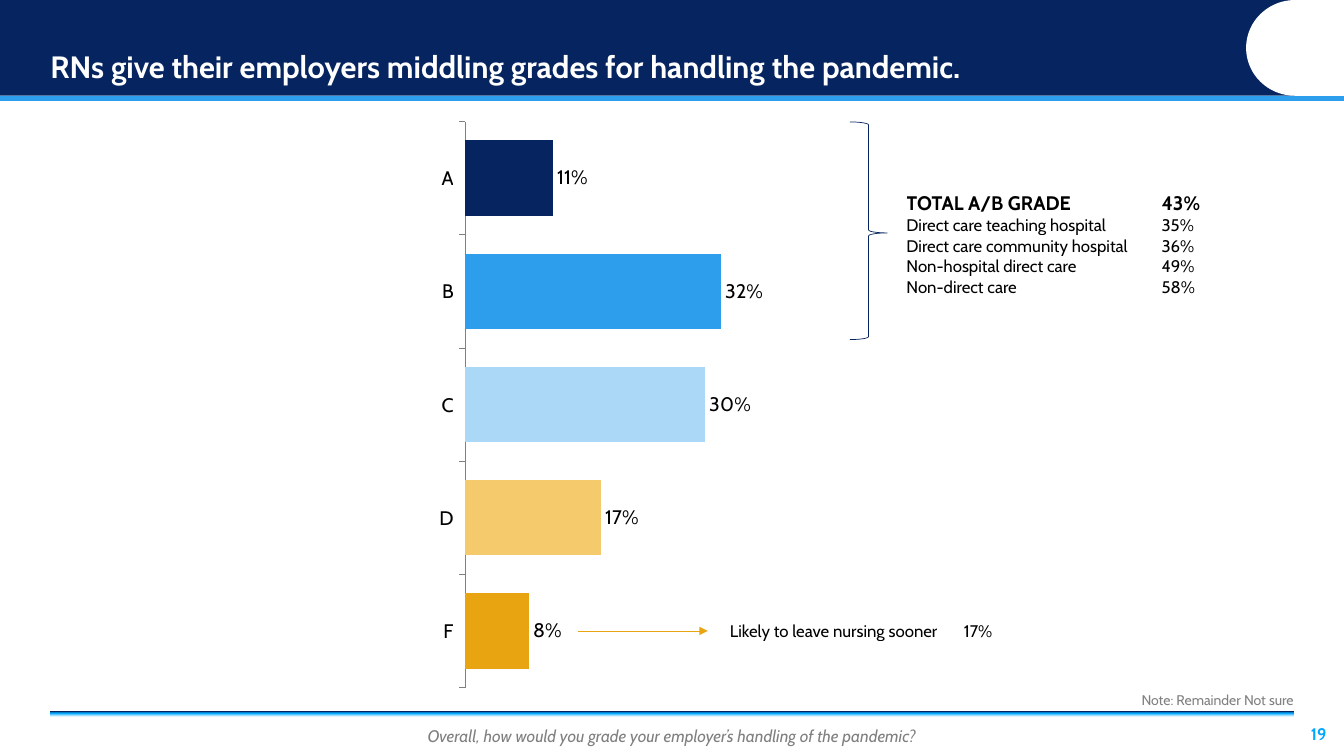
from dataclasses import dataclass, field
from typing import Any

from lxml import etree
from pptx import Presentation, oxml
from pptx import util as u
from pptx.chart.data import CategoryChartData
from pptx.dml.color import RGBColor
from pptx.enum import chart as ch
from pptx.enum import shapes, text
from pptx.oxml import ns


@dataclass(frozen=True)
class Theme:
    font: str = "Cabin"
    navy: str = "062560"
    blue: str = "2C9EEC"
    pale: str = "ABD8F7"
    sand: str = "F4CA6D"
    gold: str = "E8A511"
    bright: str = "00A7FF"
    mist: str = "CCEDFF"
    white: str = "FFFFFF"
    black: str = "000000"
    gray: str = "808080"
    title: int = 22
    large: int = 14
    normal: int = 12
    small: int = 10
    hairline: float = 0.5


@dataclass(frozen=True)
class Box:
    left: float
    top: float
    width: float
    height: float

    def emu(self) -> tuple:
        return tuple(u.Inches(v) for v in (self.left, self.top, self.width, self.height))


@dataclass(frozen=True)
class Grade:
    letter: str
    share: float
    color: str


@dataclass(frozen=True)
class Style:
    size: int
    color: str
    bold: bool = False
    italic: bool = False
    align: Any = text.PP_ALIGN.LEFT
    anchor: Any = text.MSO_ANCHOR.MIDDLE


@dataclass(frozen=True)
class Grid:
    box: Box
    cols: tuple
    rows: list
    style: Style
    header: Style = field(default=None)


T = Theme()
GRADES = [
    Grade("A", 0.11, T.navy),
    Grade("B", 0.32, T.blue),
    Grade("C", 0.30, T.pale),
    Grade("D", 0.17, T.sand),
    Grade("F", 0.08, T.gold),
]
CENTER, RIGHT = text.PP_ALIGN.CENTER, text.PP_ALIGN.RIGHT
TOP = text.MSO_ANCHOR.TOP
DETAIL = Style(T.normal, T.black, anchor=TOP)
GRIDS = [
    Grid(Box(0.5, 1.21, 4, 5.62), (4,), [(g.letter,) for g in GRADES],
         Style(T.large, T.black, align=RIGHT)),
    Grid(Box(8.99, 1.9, 3.35, 0.7), (2.53, 0.82), [
        ("TOTAL A/B GRADE", "43%"),
        ("Direct care teaching hospital", "35%"),
        ("Direct care community hospital", "36%"),
        ("Non-hospital direct care", "49%"),
        ("Non-direct care", "58%"),
    ], DETAIL, Style(T.large, T.black, bold=True, anchor=TOP)),
    Grid(Box(7.24, 6.16, 2.68, 0.14), (2.32, 0.36),
         [("Likely to leave nursing sooner", "17%")], DETAIL),
]


def rgb(color: str) -> RGBColor:
    return RGBColor.from_string(color)


def set_all(obj: Any, values: dict) -> None:
    for name, value in values.items():
        setattr(obj, name, value)


def set_font(font: Any, style: Style) -> None:
    set_all(font, {"name": T.font, "size": u.Pt(style.size),
                   "bold": style.bold, "italic": style.italic})
    font.color.rgb = rgb(style.color)


def write(tf: Any, words: str, style: Style, top: float = 0, bottom: float = 0) -> None:
    set_all(tf, {"word_wrap": True, "auto_size": text.MSO_AUTO_SIZE.NONE,
                 "vertical_anchor": style.anchor, "margin_left": 0, "margin_right": 0,
                 "margin_top": u.Inches(top), "margin_bottom": u.Inches(bottom)})
    p = tf.paragraphs[0]
    set_all(p, {"alignment": style.align, "space_before": u.Pt(0)})
    r = p.add_run()
    r.text = words
    set_font(r.font, style)


def add_block(s: Any, kind: Any, box: Box, fill: str) -> Any:
    sp = s.shapes.add_shape(kind, *box.emu())
    sp.shadow.inherit = False
    sp.fill.solid()
    sp.fill.fore_color.rgb = rgb(fill)
    sp.line.fill.background()
    return sp


def add_label(s: Any, box: Box, words: str, style: Style, pad: float = 0) -> None:
    write(s.shapes.add_textbox(*box.emu()).text_frame, words, style, pad, pad)


def place(s: Any, sp: Any, box: Box) -> None:
    s.shapes._spTree.append(sp._element)
    set_all(sp, dict(zip(("left", "top", "width", "height"), box.emu())))


def add_header(s: Any) -> None:
    rect = shapes.MSO_SHAPE.RECTANGLE
    add_block(s, rect, Box(0, 0, 13.33, 0.95), T.navy)
    add_block(s, rect, Box(0, 0.95, 13.33, 0.05), T.blue)
    notch = add_block(s, shapes.MSO_SHAPE.FLOWCHART_DELAY, Box(12.36, 0, 0.97, 0.95), T.white)
    notch._element.spPr.find(ns.qn("a:xfrm")).set("flipH", "1")
    title = s.shapes.title
    place(s, title, Box(0.5, 0.1, 11.75, 0.75))
    write(title.text_frame, "RNs give their employers middling grades for handling the pandemic.",
          Style(T.title, T.white, bold=True, anchor=text.MSO_ANCHOR.BOTTOM))
    title.text_frame.paragraphs[0].line_spacing = 0.9


def add_question(s: Any) -> None:
    sp = s.placeholders[1]
    place(s, sp, Box(0.5, 7.05, 12.33, 0.45))
    stops = [(0, T.white), (86, T.white), (88, T.mist), (94, T.bright), (100, T.navy)]
    marks = "".join(f'<a:gs pos="{pos * 1000}"><a:srgbClr val="{c}"/></a:gs>' for pos, c in stops)
    sp._element.spPr.append(oxml.parse_xml(
        f'<a:gradFill {ns.nsdecls("a")}><a:gsLst>{marks}</a:gsLst>'
        '<a:lin ang="16200000" scaled="0"/></a:gradFill>'))
    pPr = sp.text_frame.paragraphs[0]._p.get_or_add_pPr()
    set_indent = {"marL": "0", "indent": "0"}
    for name, value in set_indent.items():
        pPr.set(name, value)
    etree.SubElement(pPr, ns.qn("a:buNone"))
    write(sp.text_frame, "Overall, how would you grade your employer’s handling of the pandemic?",
          Style(T.normal, T.gray, italic=True, align=CENTER), top=0.05)


def add_grid(s: Any, grid: Grid) -> None:
    tbl = s.shapes.add_table(len(grid.rows), len(grid.cols), *grid.box.emu()).table
    set_all(tbl, {"first_row": False, "horz_banding": False})
    for col, width in zip(tbl.columns, grid.cols):
        col.width = u.Inches(width)
    for i, row in enumerate(grid.rows):
        style = grid.header if grid.header and i == 0 else grid.style
        for j, words in enumerate(row):
            cell = tbl.cell(i, j)
            cell.fill.background()
            set_all(cell, {"vertical_anchor": style.anchor, "margin_left": 0,
                           "margin_right": 0, "margin_top": 0, "margin_bottom": 0})
            p = cell.text_frame.paragraphs[0]
            p.alignment = style.align
            r = p.add_run()
            r.text = words
            set_font(r.font, style)


def add_grade_chart(s: Any) -> None:
    data = CategoryChartData(number_format="0%")
    data.categories = [str(i) for i in range(1, len(GRADES) + 1)]
    data.add_series("Series 1", [g.share for g in GRADES])
    chart = s.shapes.add_chart(ch.XL_CHART_TYPE.BAR_CLUSTERED,
                               *Box(4.53, 1.09, 8.27, 5.79).emu(), data).chart
    set_all(chart, {"has_legend": False, "has_title": False})
    set_font(chart.font, Style(T.large, T.black))
    axis = chart.category_axis
    set_all(axis, {"reverse_order": True, "tick_label_position": ch.XL_TICK_LABEL_POSITION.NONE,
                   "major_tick_mark": ch.XL_TICK_MARK.OUTSIDE})
    axis.format.line.color.rgb = rgb(T.gray)
    axis.format.line.width = u.Pt(T.hairline)
    set_all(chart.value_axis, {"minimum_scale": 0, "maximum_scale": 1,
                               "has_major_gridlines": False, "visible": False})
    plot = chart.plots[0]
    set_all(plot, {"gap_width": 50, "vary_by_categories": False, "has_data_labels": True})
    set_all(plot.data_labels, {"show_value": True, "number_format": "0%",
                               "number_format_is_linked": False,
                               "position": ch.XL_LABEL_POSITION.OUTSIDE_END})
    set_font(plot.data_labels.font, Style(T.large, T.black))
    for i, grade in enumerate(GRADES):
        fill = plot.series[0].points[i].format.fill
        fill.solid()
        fill.fore_color.rgb = rgb(grade.color)
    area = chart._chartSpace.chart.plotArea
    for old in area.findall(ns.qn("c:layout")):
        area.remove(old)
    modes = '<c:layoutTarget val="inner"/><c:xMode val="edge"/><c:yMode val="edge"/>'
    sides = "".join(f'<c:{k} val="{v}"/>' for k, v in
                    {"x": 0.01, "y": 0.02, "w": 0.96, "h": 0.97}.items())
    area.insert(0, oxml.parse_xml(
        f'<c:layout {ns.nsdecls("c")}><c:manualLayout>{modes}{sides}</c:manualLayout></c:layout>'))


def add_callouts(s: Any) -> None:
    arrow = s.shapes.add_connector(shapes.MSO_CONNECTOR.STRAIGHT, *(
        u.Inches(v) for v in (5.73, 6.26, 7.02, 6.26)))
    brace = s.shapes.add_shape(shapes.MSO_SHAPE.RIGHT_BRACE, *Box(8.43, 1.21, 0.37, 2.16).emu())
    brace.shadow.inherit = False
    brace.fill.background()
    brace.adjustments[0], brace.adjustments[1] = 0.08, 0.51
    for sp, color in ((arrow, T.gold), (brace, T.navy)):
        sp.line.color.rgb = rgb(color)
        sp.line.width = u.Pt(T.hairline)
    etree.SubElement(arrow.line._get_or_add_ln(), ns.qn("a:tailEnd"), type="triangle")
    etree.SubElement(arrow._element.spPr, ns.qn("a:effectLst"))


def main() -> None:
    prs = Presentation()
    set_all(prs, {"slide_width": u.Inches(13.33), "slide_height": u.Inches(7.5)})
    s = prs.slides.add_slide(prs.slide_layouts[1])
    add_header(s)
    add_question(s)
    add_label(s, Box(12.83, 7.05, 0.5, 0.45), "19",
              Style(T.normal, T.bright, bold=True, align=CENTER))
    add_label(s, Box(0.5, 6.84, 12.33, 0.21), "Note: Remainder Not sure",
              Style(T.small, T.gray, align=RIGHT), pad=0.04)
    add_grade_chart(s)
    for grid in GRIDS:
        add_grid(s, grid)
    add_callouts(s)
    prs.save("out.pptx")


if __name__ == "__main__":
    main()
